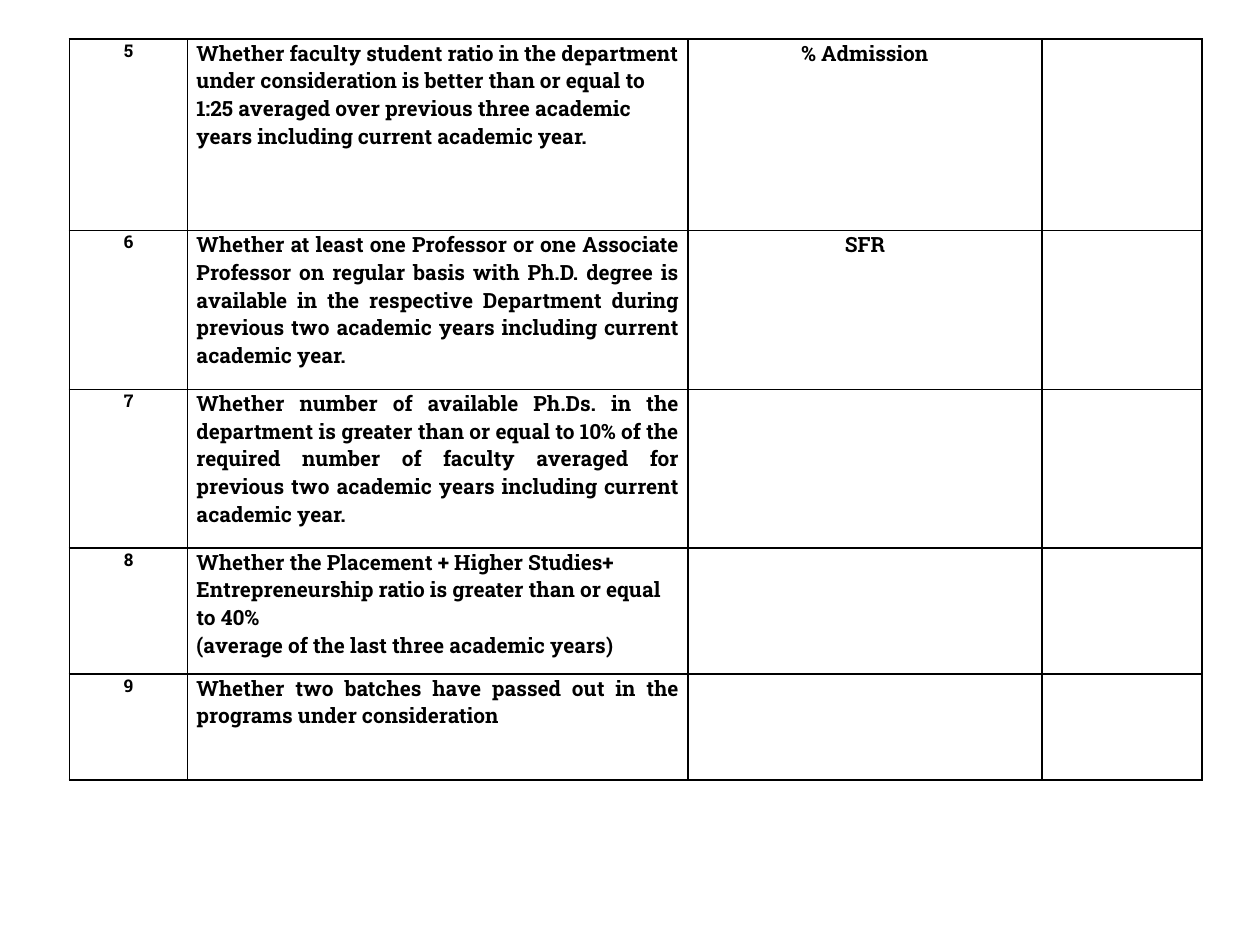
"""Builds a slide with a table of programme eligibility criteria."""
from lxml.etree import SubElement
from pptx import Presentation
from pptx.dml.color import RGBColor
from pptx.enum.text import MSO_ANCHOR, PP_ALIGN as Align
from pptx.oxml.ns import qn
from pptx.util import Inches, Pt

INK, PAPER, FONT = "000000", "FFFFFF", "Roboto Slab"
LEFT, TOP = 0.55, 0.31
COLUMN_WIDTHS = [0.94, 3.97, 2.81, 1.27]
CRITERIA = [
    (1.52, "5", Align.LEFT,
     ["Whether faculty student ratio in the department under consideration is better than "
      "or equal to 1:25 averaged over previous three academic years including current "
      "academic year."], "% Admission"),
    (1.26, "6", Align.JUSTIFY,
     ["Whether at least one Professor or one Associate Professor on regular basis with Ph.D. "
      "degree is available in the respective Department during previous two academic years "
      "including current academic year."], "SFR"),
    (1.26, "7", Align.JUSTIFY,
     ["Whether number of available Ph.Ds. in the department is greater than or equal to 10% "
      "of the required number of faculty averaged for previous two academic years including "
      "current academic year."], ""),
    (1.0, "8", Align.LEFT,
     ["Whether the Placement + Higher Studies+ Entrepreneurship ratio is greater than or "
      "equal to 40%", "(average of the last three academic years)"], ""),
    (0.84, "9", Align.JUSTIFY,
     ["Whether two batches have passed out in the programs under consideration"], ""),
]
CELL_FORMAT = {
    "margin_left": Inches(0.07), "margin_right": Inches(0.07),
    "margin_top": 0, "margin_bottom": 0, "vertical_anchor": MSO_ANCHOR.TOP,
}


def color(value):
    return RGBColor.from_string(value)


def apply_format(target, values):
    for name, value in values.items():
        setattr(target, name, value)


def add_borders(cell, width=1):
    properties = cell._tc.get_or_add_tcPr()
    for index, side in enumerate(("lnL", "lnR", "lnT", "lnB")):
        line = SubElement(properties, qn(f"a:{side}"), w=str(Pt(width)))
        fill = SubElement(line, qn("a:solidFill"))
        SubElement(fill, qn("a:srgbClr"), val=INK)
        properties.insert(index, line)


def fill_cell(cell, lines, size, alignment):
    apply_format(cell, CELL_FORMAT)
    cell.fill.solid()
    cell.fill.fore_color.rgb = color(PAPER)
    add_borders(cell)
    if not any(lines):
        return
    cell.text = "\n".join(lines)
    for para in cell.text_frame.paragraphs:
        para.alignment = alignment
        for span in para.runs:
            apply_format(span.font, {"name": FONT, "size": Pt(size), "bold": True})
            span.font.color.rgb = color(INK)


def main():
    deck = Presentation()
    deck.slide_width, deck.slide_height = Inches(10), Inches(7.5)
    page = deck.slides.add_slide(deck.slide_layouts[6])
    width, height = sum(COLUMN_WIDTHS), sum(row[0] for row in CRITERIA)
    table = page.shapes.add_table(
        len(CRITERIA), len(COLUMN_WIDTHS),
        *map(Inches, (LEFT, TOP, width, height))).table
    apply_format(table, {"first_row": False, "horz_banding": False})
    for column, column_width in zip(table.columns, COLUMN_WIDTHS):
        column.width = Inches(column_width)
    for row, (row_height, number, alignment, criterion, measure) in zip(table.rows, CRITERIA):
        row.height = Inches(row_height)
        contents = [([number], 10, Align.CENTER), (criterion, 12, alignment),
                    ([measure], 12, Align.CENTER), ([], 12, Align.LEFT)]
        for cell, content in zip(row.cells, contents):
            fill_cell(cell, *content)
    deck.save("out.pptx")


if __name__ == "__main__":
    main()
